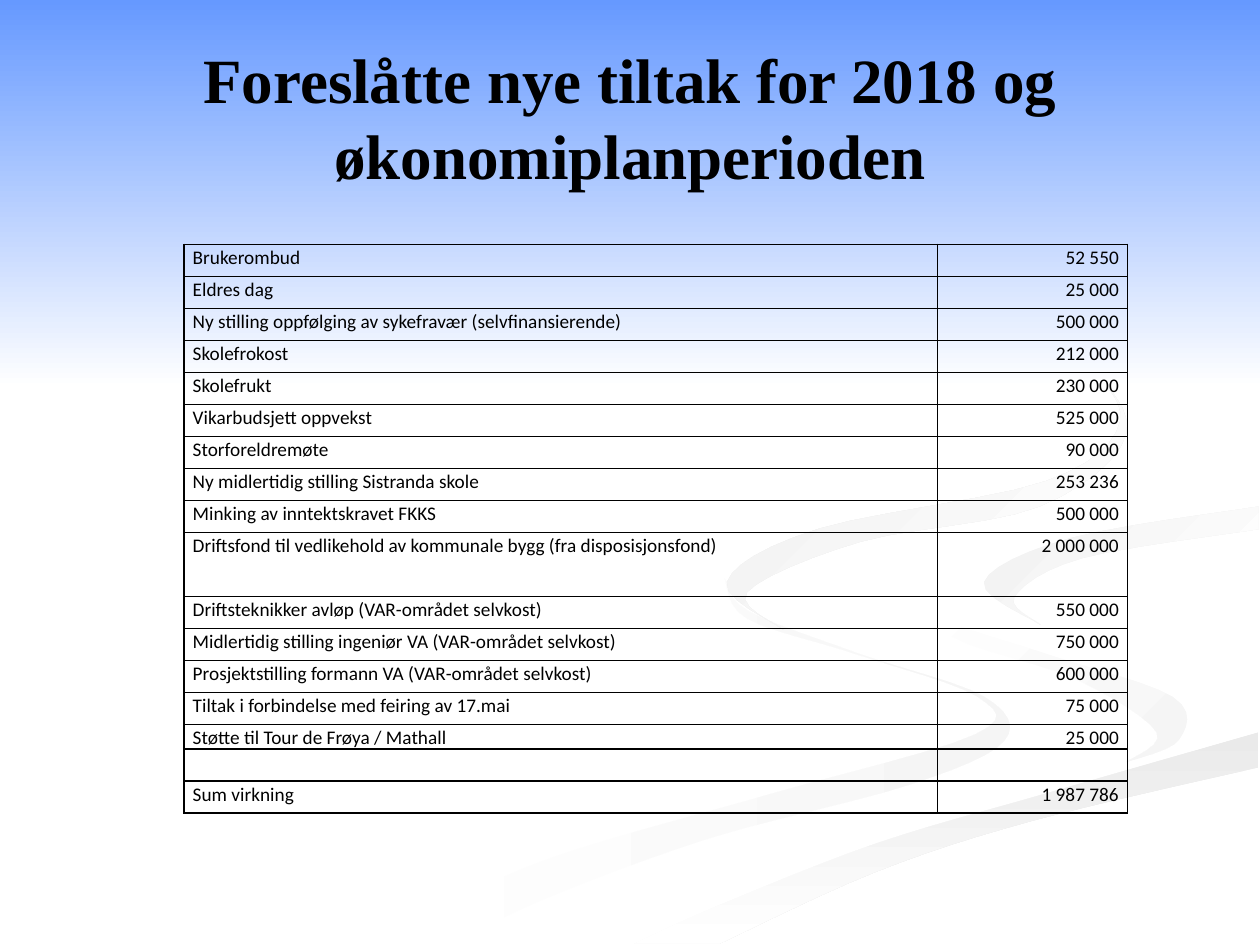
import pptx
import pptx.dml.color
import pptx.enum.text
import pptx.oxml.ns
import pptx.util
from lxml import etree

# Content
TITLE = "Foreslåtte nye tiltak for 2018 og økonomiplanperioden"
ROWS = [
    ("Brukerombud", "52 550"),
    ("Eldres dag", "25 000"),
    ("Ny stilling oppfølging av sykefravær (selvfinansierende)", "500 000"),
    ("Skolefrokost", "212 000"),
    ("Skolefrukt", "230 000"),
    ("Vikarbudsjett oppvekst", "525 000"),
    ("Storforeldremøte", "90 000"),
    ("Ny midlertidig stilling Sistranda skole", "253 236"),
    ("Minking av inntektskravet FKKS", "500 000"),
    ("Driftsfond til vedlikehold av kommunale bygg (fra disposisjonsfond)", "2 000 000"),
    ("Driftsteknikker avløp (VAR-området selvkost)", "550 000"),
    ("Midlertidig stilling ingeniør VA (VAR-området selvkost)", "750 000"),
    ("Prosjektstilling formann VA (VAR-området selvkost)", "600 000"),
    ("Tiltak i forbindelse med feiring av 17.mai", "75 000"),
    ("Støtte til Tour de Frøya / Mathall", "25 000"),
    ("", ""),
    ("Sum virkning", "1 987 786"),
]
COLS = (5.98, 1.51)
UNIT = 18.3  # row height in points
SHARE = {9: 2, 14: 0.2}  # rows that are not one unit high

INK = {"black": "000000", "white": "FFFFFF", "sky": "6699FF",
       "pale": "F5F5F5", "mist": "F1F1F1", "fog": "EDEDED", "grey": "EAEAEA"}

# Edges shared by several ribbons, in inches
FOLD = [(7.25, 4.64), (7.45, 4.9), (8.31, 5.19), (9.31, 5.53), (9.36, 5.87), (8.94, 6.05)]
LOW = [(5.03, 7.49), (5.69, 7.19), (6.96, 6.69), (8.32, 6.29), (9.99, 5.81)]
CREST = [(9.99, 4.02), (8.5, 4.27), (7.81, 4.62), (8.26, 4.96)]

# Ribbons: start colour, end colour, clockwise angle, then two groups of smooth edges
RIBBONS = [
    ("white", "pale", 0,
     [(5.75, 4.59), (5.94, 4.85), (6.82, 5.19), (7.81, 5.53), (7.97, 5.88),
      (7.21, 6.23), (5.64, 6.65), (4.31, 7.14), (3.61, 7.49)],
     [(3, 7.49), (3.76, 7.07), (4.58, 6.74), (6.16, 6.29), (7.74, 5.83),
      (7.76, 5.53), (6.79, 5.19), (5.93, 4.91), (5.75, 4.59)]),
    ("white", "pale", 45, FOLD,
     [(8.94, 6.05), (9.18, 5.81), (8.54, 5.39), (7.55, 5.05), (7.25, 4.64)]),
    ("grey", "white", 90, LOW,
     [(9.99, 6.09), (8.21, 6.51), (6.95, 6.92), (5.71, 7.49)]),
    ("white", "white", 0,
     [(9.99, 3.87), (9.2, 4.01), (7.7, 4.27)] + FOLD + [(7.43, 6.43), (5.73, 7.03), (4.77, 7.49)],
     LOW, [(9.99, 5.38), (9.04, 5.19), (8.04, 4.85), (7.81, 4.62), (8.5, 4.27), (9.99, 4.02)]),
    ("mist", "white", 45, CREST,
     [(8.26, 4.96), (8.05, 4.74), (8.59, 4.43), (9.99, 4.2)]),
    ("fog", "white", 45,
     [(6.22, 5), (5.93, 4.7), (6.83, 4.3), (8.25, 4.02), (8.94, 3.44), (8.54, 2.83), (7.62, 2.33)],
     [(7.62, 2.33), (8.55, 2.85), (8.89, 3.35), (8.3, 3.82), (6.49, 4.2), (5.77, 4.62), (6.22, 5)]),
]
SKY = ("sky", "white", 90, [(0, 0), (10, 0)], [(10, 3.08), (0, 3.08)])
STEPS = 6

ALIGN = pptx.enum.text.PP_ALIGN
inch = pptx.util.Inches


def rgb(name):
    return pptx.dml.color.RGBColor.from_string(INK[name])


def smooth(edge):
    """Catmull-Rom curve through the points of an edge."""
    ends = [edge[0]] + edge + [edge[-1]]
    curve = []
    for a, b, c, d in zip(ends, ends[1:], ends[2:], ends[3:]):
        for step in range(STEPS):
            t = step / STEPS
            curve.append(tuple(
                q + t * (r - p + t * (2 * p - 5 * q + 4 * r - s
                                      + t * (3 * q - p - 3 * r + s))) / 2
                for p, q, r, s in zip(a, b, c, d)))
    return curve + [edge[-1]]


def write(frame, text, font, size, bold=False, align=ALIGN.LEFT, space=None):
    para = frame.paragraphs[0]
    para.alignment = align
    para.line_spacing = space
    if not text:  # an empty cell still needs its text size
        end = etree.SubElement(para._p, pptx.oxml.ns.qn("a:endParaRPr"))
        end.set("sz", str(size * 100))
        return
    run = para.add_run()
    run.text = text
    run.font.name, run.font.size = font, pptx.util.Pt(size)
    run.font.bold = bold
    run.font.color.rgb = rgb("black")


def draw(slide, start, end, angle, *edges):
    points = [(inch(x), inch(y)) for edge in edges for x, y in smooth(edge)]
    pen = slide.shapes.build_freeform(*points[0])
    pen.add_line_segments(points[1:], close=True)
    shape = pen.convert_to_shape()
    shape.shadow.inherit = False
    shape.line.fill.background()
    if start == end:
        shape.fill.solid()
        shape.fill.fore_color.rgb = rgb(start)
        return
    shape.fill.gradient()
    shape.fill.gradient_angle = -angle % 360
    for stop, name, spot in zip(shape.fill.gradient_stops, (start, end), (0, 1)):
        stop.color.rgb = rgb(name)
        stop.position = spot


def border(cell):
    props = cell._tc.get_or_add_tcPr()
    for i, side in enumerate(("lnL", "lnR", "lnT", "lnB")):
        line = etree.Element(pptx.oxml.ns.qn("a:" + side), w=str(pptx.util.Pt(1)))
        fill = etree.SubElement(line, pptx.oxml.ns.qn("a:solidFill"))
        etree.SubElement(fill, pptx.oxml.ns.qn("a:srgbClr"), val=INK["black"])
        props.insert(i, line)


def main():
    deck = pptx.Presentation()
    deck.slide_width, deck.slide_height = inch(10), inch(7.5)
    slide = deck.slides.add_slide(deck.slide_layouts[6])

    # Backdrop
    for item in RIBBONS + [SKY]:
        draw(slide, *item)

    # Title
    frame = slide.shapes.add_textbox(inch(0.5), inch(0.3), inch(9), inch(1.25)).text_frame
    frame.word_wrap = True
    frame.vertical_anchor = pptx.enum.text.MSO_ANCHOR.MIDDLE
    write(frame, TITLE, "Times New Roman", 36, bold=True, align=ALIGN.CENTER)

    # Table of measures
    table = slide.shapes.add_table(len(ROWS), len(COLS), inch(1.46), inch(1.94),
                                   inch(sum(COLS)), inch(4.5)).table
    table.first_row = table.horz_banding = False
    for col, width in zip(table.columns, COLS):
        col.width = inch(width)
    for r, texts in enumerate(ROWS):
        table.rows[r].height = pptx.util.Pt(UNIT * SHARE.get(r, 1))
        for c, text in enumerate(texts):
            cell = table.cell(r, c)
            cell.margin_left = cell.margin_right = inch(0.07)
            cell.margin_top = cell.margin_bottom = 0
            cell.fill.background()
            border(cell)
            write(cell.text_frame, text, "Calibri", 11, space=1.07,
                  align=(ALIGN.LEFT, ALIGN.RIGHT)[c])

    deck.save("out.pptx")


if __name__ == "__main__":
    main()
